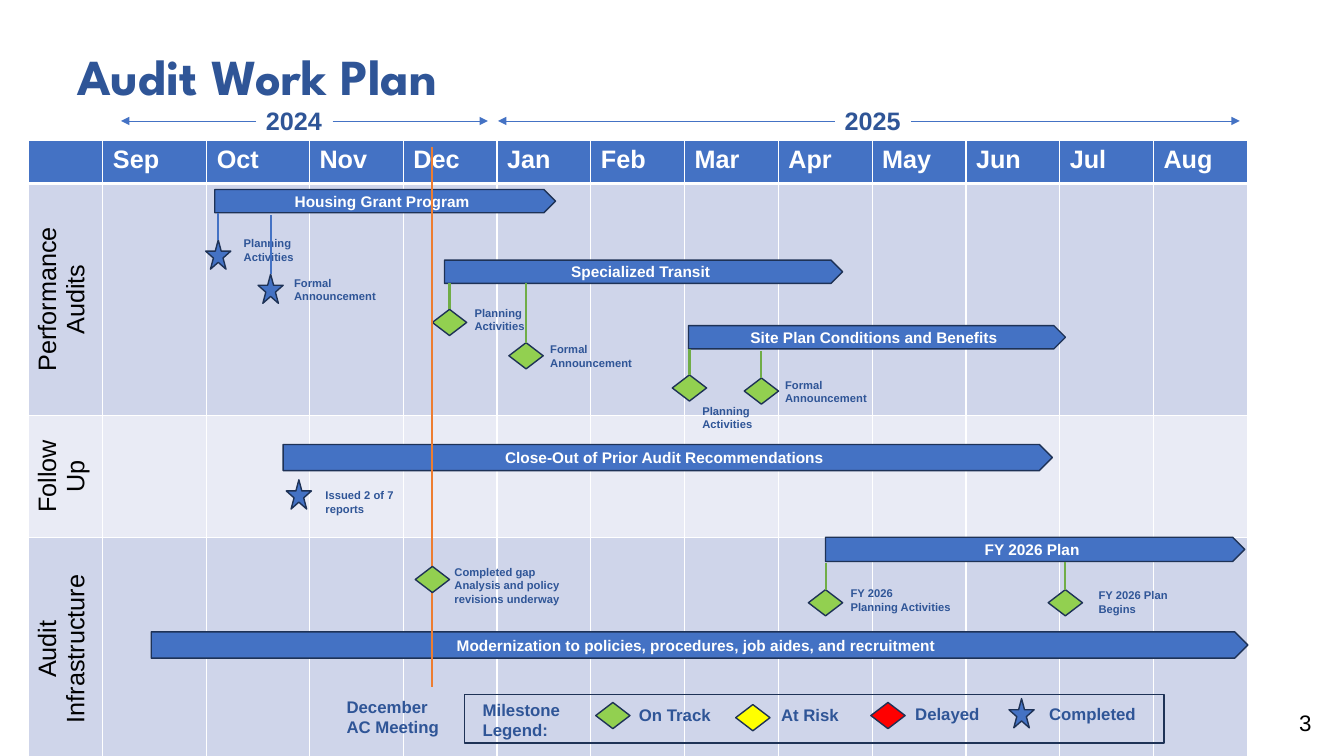
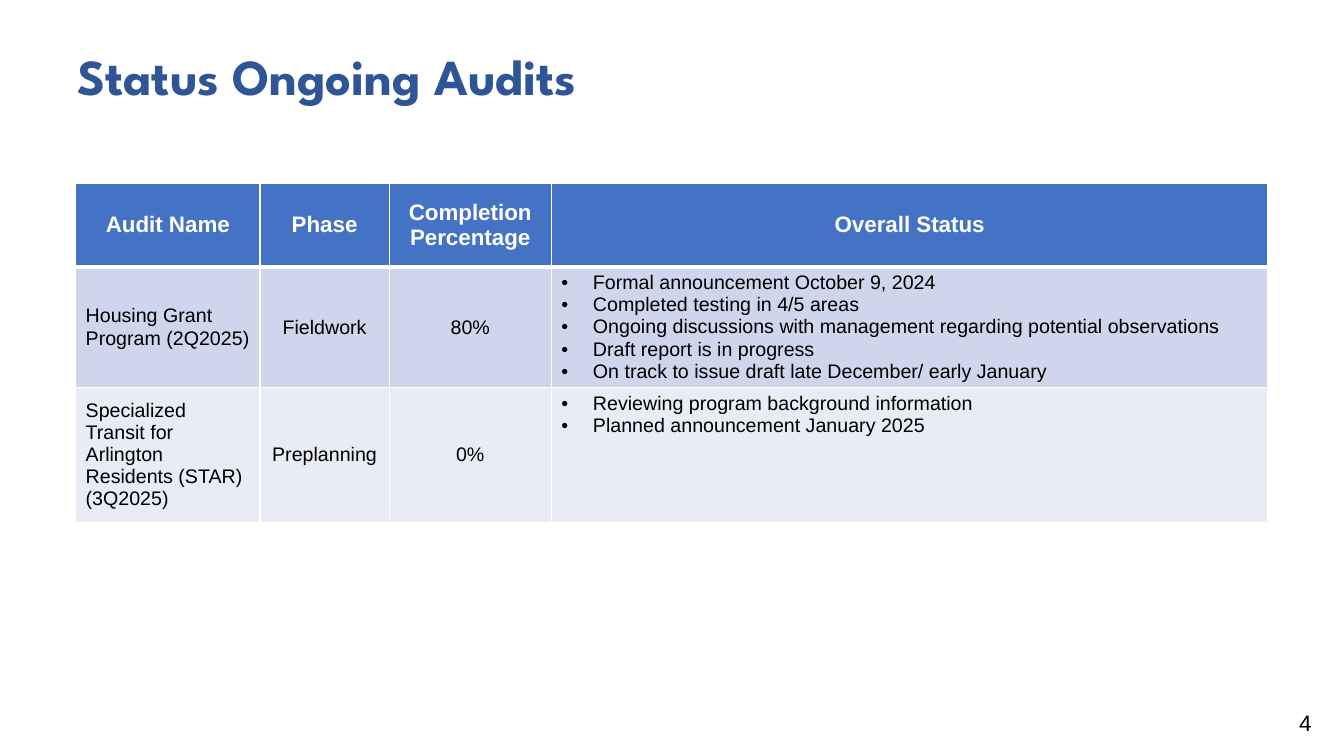
from lxml.etree import SubElement
from pptx import Presentation
from pptx.dml.color import RGBColor
from pptx.enum.shapes import MSO_CONNECTOR, MSO_SHAPE
from pptx.enum.text import MSO_ANCHOR, MSO_AUTO_SIZE, PP_ALIGN
from pptx.oxml.ns import qn
from pptx.util import Pt

COLORS = {
    "title": "2F5597", "blue": "4472C4", "outline": "1E3256", "white": "FFFFFF",
    "black": "000000", "band": "CFD5EA", "light": "E9EBF5", "green": "92D050",
    "stem": "70AD47", "yellow": "FFFF00", "red": "FF0000", "orange": "ED7D31",
}
MARKS = {  # shape, fill, width, height
    "on track": (MSO_SHAPE.DIAMOND, "green", 24.5, 18.7),
    "at risk": (MSO_SHAPE.DIAMOND, "yellow", 24.5, 18.7),
    "delayed": (MSO_SHAPE.DIAMOND, "red", 24.5, 18.7),
    "completed": (MSO_SHAPE.STAR_5_POINT, "blue", 18, 20.9),
}
STEMS = {"on track": "stem", "completed": "blue"}


def rgb(name):
    return RGBColor.from_string(COLORS[name])


class Board:
    """Holds the deck, the shared style and the current slide."""

    font = "Arial"

    def __init__(self):
        self.deck = Presentation()
        self.deck.slide_width, self.deck.slide_height = Pt(960), Pt(540)
        self.slide = None

    def page(self, title, number):
        self.slide = self.deck.slides.add_slide(self.deck.slide_layouts[6])
        box = self.text(title, 48, 21.6, 864, 64.8, 36, wrap=True, font="League Spartan")
        box.text_frame.vertical_anchor = MSO_ANCHOR.MIDDLE
        self.text(str(number), 904.3, 503.3, 56.2, 26.6, 16, "black", False, PP_ALIGN.CENTER, True)

    def style(self, frame, size, color, bold, align=None, font=None):
        for para in frame.paragraphs:
            para.alignment = align
            for span in para.runs:
                span.font.name = font or self.font
                span.font.size = Pt(size)
                span.font.bold = bold
                span.font.color.rgb = rgb(color)

    def text(self, words, left, top, width, height, size, color="title", bold=True,
             align=None, wrap=False, font=None):
        box = self.slide.shapes.add_textbox(Pt(left), Pt(top), Pt(width), Pt(height))
        frame = box.text_frame
        frame.text = words
        frame.word_wrap = wrap
        frame.auto_size = MSO_AUTO_SIZE.NONE if wrap else MSO_AUTO_SIZE.SHAPE_TO_FIT_TEXT
        self.style(frame, size, color, bold, align, font)
        return box

    def shape(self, kind, left, top, width, height, fill=None):
        shape = self.slide.shapes.add_shape(kind, Pt(left), Pt(top), Pt(width), Pt(height))
        shape.shadow.inherit = False
        if fill:
            shape.fill.solid()
            shape.fill.fore_color.rgb = rgb(fill)
        else:
            shape.fill.background()
        shape.line.color.rgb = rgb("outline")
        shape.line.width = Pt(1)
        return shape

    def bar(self, words, left, top, width, height):
        bar = self.shape(MSO_SHAPE.PENTAGON, left, top, width, height, "blue")
        bar.text_frame.text = words
        bar.text_frame.vertical_anchor = MSO_ANCHOR.MIDDLE
        self.style(bar.text_frame, 11, "white", True, PP_ALIGN.CENTER)

    def line(self, start, end, color, width, arrow=False):
        line = self.slide.shapes.add_connector(
            MSO_CONNECTOR.STRAIGHT, *(Pt(value) for value in (*start, *end)))
        line.line.color.rgb = rgb(color)
        line.line.width = Pt(width)
        if arrow:
            SubElement(line.line._get_or_add_ln(), qn("a:tailEnd"), type="triangle")
        SubElement(line._element.spPr, qn("a:effectLst"))
        return line

    def mark(self, status, center, top):
        kind, fill, width, height = MARKS[status]
        return self.shape(kind, center - width / 2, top, width, height, fill)

    def milestone(self, status, center, top, stem_top, words, left, label_top, width):
        """A status mark with its label and, if stem_top is given, a stem up to its bar."""
        self.text(words, left, label_top, width, 26.6, 8)
        mark = self.mark(status, center, top)
        if stem_top:
            stem = self.line((center, top), (center, stem_top), STEMS[status], 1.5)
            stem.begin_connect(mark, 0)

    def year(self, words, left, arrow_left, arrow_right):
        box = self.text(words, left, 72, 54.7, 28.8, 18)
        for start, end, site in ((left, arrow_left, 1), (left + 54.7, arrow_right, 3)):
            arrow = self.line((start, 86.4), (end, 86.4), "blue", 0.5, arrow=True)
            arrow.begin_connect(box, site)

    def table(self, left, top, widths, heights):
        """An empty table with a blue header row and banded rows below."""
        table = self.slide.shapes.add_table(
            len(heights), len(widths), Pt(left), Pt(top), Pt(sum(widths)), Pt(sum(heights))).table
        for column, width in zip(table.columns, widths):
            column.width = Pt(width)
        for index, (row, height) in enumerate(zip(table.rows, heights)):
            row.height = Pt(height)
            fill = "blue" if index == 0 else "band" if index % 2 else "light"
            for cell in row.cells:
                self.borders(cell, index)
                cell.fill.solid()
                cell.fill.fore_color.rgb = rgb(fill)
        return table

    def borders(self, cell, row):
        thick = {0: "lnB", 1: "lnT"}.get(row)
        properties = cell._tc.get_or_add_tcPr()
        for side in ("lnL", "lnR", "lnT", "lnB"):
            edge = SubElement(properties, qn(f"a:{side}"), w=str(Pt(3 if side == thick else 1)))
            SubElement(SubElement(edge, qn("a:solidFill")), qn("a:srgbClr"), val=COLORS["white"])

    def cell(self, cell, words, size, color="black", bold=False, align=None, anchor=MSO_ANCHOR.MIDDLE):
        cell.text_frame.text = words
        cell.vertical_anchor = anchor
        self.style(cell.text_frame, size, color, bold, align)

    def bullets(self, frame):
        for para in frame.paragraphs:
            properties = para._p.get_or_add_pPr()
            properties.set("marL", str(Pt(22.5)))
            properties.set("indent", str(-Pt(22.5)))
            SubElement(properties, qn("a:buFont"), typeface=self.font)
            SubElement(properties, qn("a:buChar"), char="•")


def work_plan(board):
    board.page("Audit Work Plan", 3)
    table = board.table(20.2, 100.1, [53.3, 74.2, 73.4] + [67] * 10, [31, 165.6, 79.2, 115.2])
    months = "Sep Oct Nov Dec Jan Feb Mar Apr May Jun Jul Aug".split()
    for column, month in enumerate(months, 1):
        board.cell(table.cell(0, column), month, 18, "white", True, anchor=MSO_ANCHOR.TOP)
    for row, group in enumerate(("Performance\nAudits", "Follow Up", "Audit Infrastructure"), 1):
        cell = table.cell(row, 0)
        board.cell(cell, group, 18, align=PP_ALIGN.CENTER)
        cell._tc.get_or_add_tcPr().set("vert", "vert270")

    board.year("2024", 182.9, 86.4, 348.5)
    board.year("2025", 596.2, 355.7, 885.6)

    for bar in (
        ("Close-Out of Prior Audit Recommendations", 202.3, 317.5, 549.4, 18.7),
        ("Housing Grant Program", 153.4, 135.4, 243.4, 16.6),
        ("Specialized Transit", 317.5, 185.8, 284.4, 16.6),
        ("Site Plan Conditions and Benefits", 491.8, 232.6, 269.3, 16.6),
        ("FY 2026 Plan", 589.7, 383.8, 299.5, 17.3),
        ("Modernization to policies, procedures, job aides, and recruitment",
         108, 451.4, 783.4, 18.7),
    ):
        board.bar(*bar)

    planning, formal = "Planning\nActivities", "Formal\nAnnouncement"
    for milestone in (
        ("completed", 155.9, 171.4, 152, planning, 167, 165.6, 51.1),
        ("completed", 193.3, 195.8, 153.4, formal, 203, 193.7, 73.4),
        ("on track", 321.1, 221, 202.3, planning, 331.9, 215.3, 51.1),
        ("on track", 375.8, 244.8, 202.3, formal, 385.9, 241.2, 73.4),
        ("on track", 492.5, 267.8, 249.1, planning, 494.6, 285.1, 51.1),
        ("on track", 543.9, 270, 250.6, formal, 553.7, 266.4, 73.4),
        ("on track", 589.7, 421.2, 402.5, "FY 2026\nPlanning Activities", 600.5, 415.4, 87.1),
        ("on track", 761, 421.2, 401.8, "FY 2026 Plan\nBegins", 777.6, 416.9, 66.2),
        ("completed", 213.5, 342.7, None, "Issued 2 of 7\nreports", 225.4, 345.6, 64.1),
    ):
        board.milestone(*milestone)

    board.line((308.9, 105.1), (308.9, 491), "orange", 1.5)
    board.text("December\nAC Meeting", 240.5, 493.9, 81.4, 36, 12)
    board.milestone("on track", 308.9, 404.6, None,
                    "Completed gap\nAnalysis and policy\nrevisions underway", 317.5, 400.3, 92.9)

    board.shape(MSO_SHAPE.RECTANGLE, 331.9, 496.1, 499.7, 34.6)
    board.text("Milestone\nLegend:", 337.7, 496.1, 75.6, 36, 12, wrap=True)
    for status, center, top, words, left, label_top, width in (
        ("on track", 437.8, 501.8, "On Track", 449.3, 499.7, 66.2),
        ("at risk", 537.8, 503.3, "At Risk", 550.8, 499.7, 56.2),
        ("delayed", 634.3, 501.8, "Delayed", 646.6, 499, 61.2),
        ("completed", 729.7, 499, "Completed", 742.3, 499, 77),
    ):
        board.mark(status, center, top)
        board.text(words, left, label_top, width, 21.6, 12)


def audit_status(board):
    board.page("Status Ongoing Audits", 4)
    table = board.table(54, 131, [131.8, 92.2, 115.9, 511.9], [59.8, 84.2, 96.5])
    headings = ("Audit Name", "Phase", "Completion Percentage", "Overall Status")
    for column, heading in enumerate(headings):
        board.cell(table.cell(0, column), heading, 16, "white", True, PP_ALIGN.CENTER)
    audits = (
        ("Housing Grant Program (2Q2025)", "Fieldwork", "80%", (
            "Formal announcement October 9, 2024",
            "Completed testing in 4/5 areas",
            "Ongoing discussions with management regarding potential observations",
            "Draft report is in progress",
            "On track to issue draft late December/ early January")),
        ("Specialized Transit for Arlington Residents (STAR) (3Q2025)", "Preplanning", "0%", (
            "Reviewing program background information",
            "Planned announcement January 2025")),
    )
    for row, (name, phase, share, notes) in enumerate(audits, 1):
        board.cell(table.cell(row, 0), name, 14)
        board.cell(table.cell(row, 1), phase, 14, align=PP_ALIGN.CENTER)
        board.cell(table.cell(row, 2), share, 14, align=PP_ALIGN.CENTER)
        status = table.cell(row, 3)
        board.cell(status, "\n".join(notes), 14, anchor=MSO_ANCHOR.TOP)
        board.bullets(status.text_frame)


def main():
    board = Board()
    work_plan(board)
    audit_status(board)
    board.deck.save("out.pptx")


if __name__ == "__main__":
    main()
